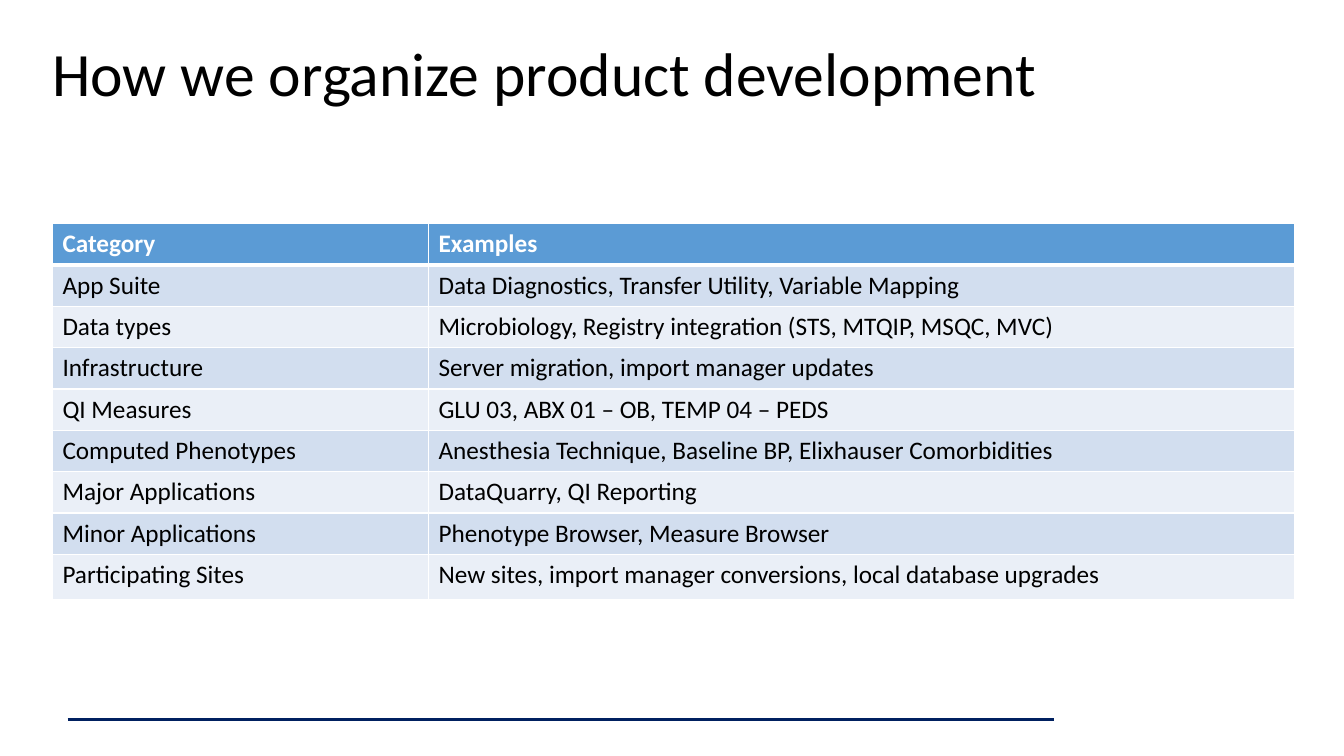
from dataclasses import dataclass

import pptx
import pptx.dml.color
import pptx.enum.shapes
import pptx.enum.text
import pptx.oxml
import pptx.oxml.ns
import pptx.util

Inches = pptx.util.Inches
Pt = pptx.util.Pt

FONT = "Calibri"
BLACK, WHITE, NAVY = "000000", "FFFFFF", "002060"
HEADER_FILL = "5B9BD5"
BAND_FILLS = ("D2DEEF", "EAEFF7")
COLUMN_WIDTHS = (3.73, 8.59)
ROW_HEIGHT, LAST_ROW_HEIGHT = 0.41, 0.45


@dataclass
class Row:
    category: str
    examples: str


HEADER = Row("Category", "Examples")
ROWS = [
    Row("App Suite", "Data Diagnostics, Transfer Utility, Variable Mapping"),
    Row("Data types", "Microbiology, Registry integration (STS, MTQIP, MSQC, MVC)"),
    Row("Infrastructure", "Server migration, import manager updates"),
    Row("QI Measures", "GLU 03, ABX 01 – OB, TEMP 04 – PEDS"),
    Row("Computed Phenotypes", "Anesthesia Technique, Baseline BP, Elixhauser Comorbidities"),
    Row("Major Applications", "DataQuarry, QI Reporting"),
    Row("Minor Applications", "Phenotype Browser, Measure Browser"),
    Row("Participating Sites", "New sites, import manager conversions, local database upgrades"),
]


def rgb(value: str) -> pptx.dml.color.RGBColor:
    return pptx.dml.color.RGBColor.from_string(value)


def format_text(tf, size: float, color: str, bold: bool = False) -> None:
    for p in tf.paragraphs:
        for r in p.runs:
            r.font.name = FONT
            r.font.size = Pt(size)
            r.font.bold = bold
            r.font.color.rgb = rgb(color)


def add_border(cell, side: str, width: float) -> None:
    """Draw a white border on one side (L, R, T or B); call before filling."""
    ns = pptx.oxml.ns.nsdecls("a")
    cell._tc.get_or_add_tcPr().append(pptx.oxml.parse_xml(
        f'<a:ln{side} {ns} w="{Pt(width)}"><a:solidFill>'
        f'<a:srgbClr val="{WHITE}"/></a:solidFill></a:ln{side}>'))


def add_footer_line(slide) -> None:
    line = slide.shapes.add_connector(
        pptx.enum.shapes.MSO_CONNECTOR.STRAIGHT,
        Inches(0.67), Inches(7.14), Inches(10.45), Inches(7.14))
    line.line.color.rgb = rgb(NAVY)
    line.line.width = Pt(2)
    line._element.spPr.append(pptx.oxml.parse_xml(
        f'<a:effectLst {pptx.oxml.ns.nsdecls("a")}/>'))


def add_title(slide, text: str) -> None:
    sp = slide.shapes.add_textbox(Inches(0.42), Inches(0.23), Inches(11.5), Inches(1.06))
    tf = sp.text_frame
    tf.word_wrap = True
    tf.vertical_anchor = pptx.enum.text.MSO_ANCHOR.MIDDLE
    tf.text = text
    tf.paragraphs[0].line_spacing = 0.9
    format_text(tf, 44, BLACK)


def add_category_table(slide, rows: list[Row]) -> None:
    """Add a table with a header row and alternating body fills."""
    height = ROW_HEIGHT * (len(rows) - 1) + LAST_ROW_HEIGHT
    table = slide.shapes.add_table(
        len(rows), len(COLUMN_WIDTHS), Inches(0.52), Inches(2.22),
        Inches(sum(COLUMN_WIDTHS)), Inches(height)).table
    for column, width in zip(table.columns, COLUMN_WIDTHS):
        column.width = Inches(width)
    for i, row in enumerate(rows):
        is_header = i == 0
        is_last = i == len(rows) - 1
        table.rows[i].height = Inches(LAST_ROW_HEIGHT if is_last else ROW_HEIGHT)
        widths = {"L": 1, "R": 1, "T": 3 if i == 1 else 1, "B": 3 if is_header else 1}
        for j, text in enumerate((row.category, row.examples)):
            cell = table.cell(i, j)
            cell.text_frame.text = text
            format_text(cell.text_frame, 18, WHITE if is_header else BLACK, is_header)
            for side, width in widths.items():
                add_border(cell, side, width)
            cell.fill.solid()
            cell.fill.fore_color.rgb = rgb(HEADER_FILL if is_header else BAND_FILLS[(i - 1) % 2])


def main() -> None:
    prs = pptx.Presentation()
    prs.slide_width, prs.slide_height = Inches(13.33), Inches(7.5)
    slide = prs.slides.add_slide(prs.slide_layouts[6])
    add_footer_line(slide)
    add_title(slide, "How we organize product development")
    add_category_table(slide, [HEADER, *ROWS])
    prs.save("out.pptx")


if __name__ == "__main__":
    main()
